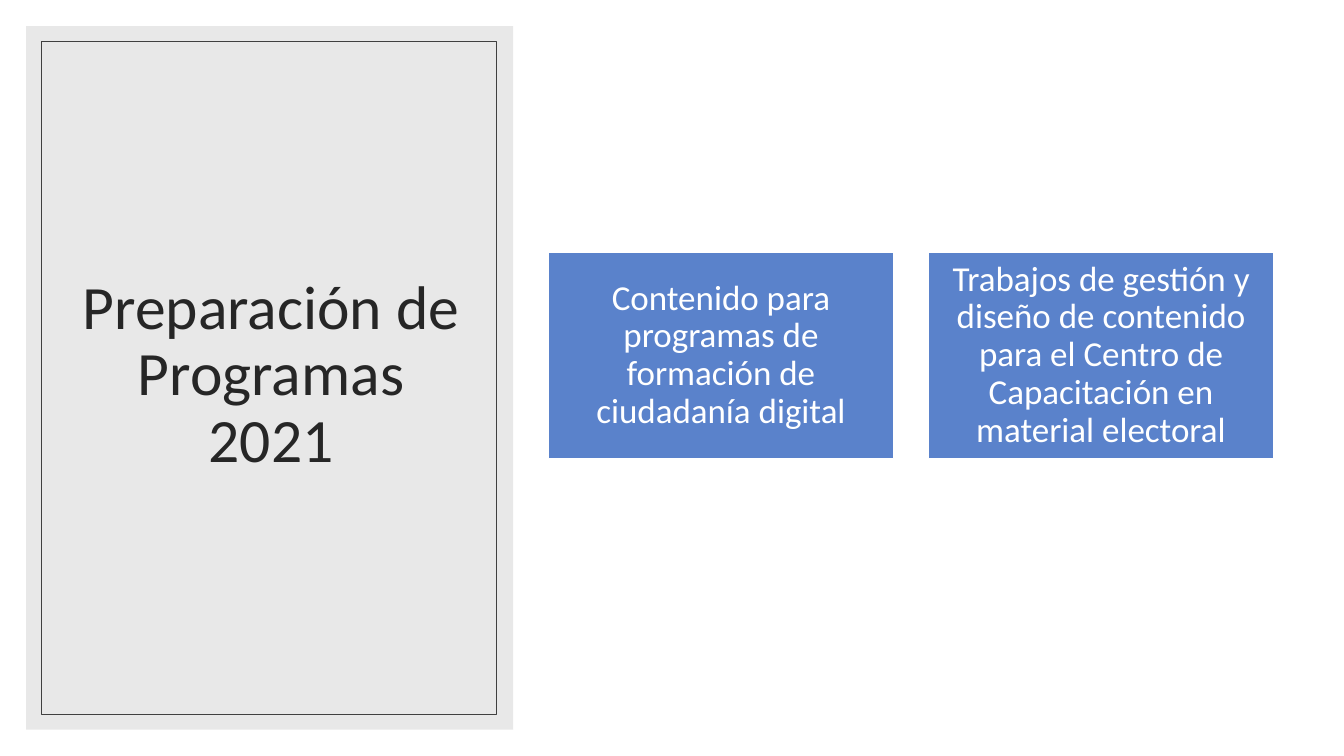
from lxml import etree
from pptx import Presentation
from pptx.dml.color import RGBColor
from pptx.enum.shapes import MSO_SHAPE
from pptx.enum.text import MSO_ANCHOR, MSO_AUTO_SIZE, PP_ALIGN
from pptx.oxml.ns import qn
from pptx.util import Inches, Pt

RECT = MSO_SHAPE.RECTANGLE
MIDDLE = MSO_ANCHOR.MIDDLE
CENTER = PP_ALIGN.CENTER
NO_FIT = MSO_AUTO_SIZE.NONE

FONT = "Calibri"
CARDS = [
    "Contenido para programas de formación de ciudadanía digital",
    "Trabajos de gestión y diseño de contenido para el Centro de "
    "Capacitación en material electoral",
]
LEFT, TOP, WIDE, HIGH, STEP = 5.44, 2.5, 3.42, 2.05, 3.77


def color(code):
    return RGBColor.from_string(code)


def apply(target, values):
    for name, value in values.items():
        setattr(target, name, value)


def place(shape, left, top, width, height):
    apply(shape, {"left": Inches(left), "top": Inches(top),
                  "width": Inches(width), "height": Inches(height)})


def write(shape, text, size, tint, inset):
    frame = shape.text_frame
    frame.text = text
    side = Inches(inset)
    apply(frame, {"word_wrap": True, "auto_size": NO_FIT,
                  "vertical_anchor": MIDDLE,
                  "margin_left": side, "margin_right": side,
                  "margin_top": Inches(0.05), "margin_bottom": Inches(0.05)})
    para = frame.paragraphs[0]
    apply(para, {"alignment": CENTER, "line_spacing": 0.9})
    font = para.runs[0].font
    apply(font, {"name": FONT, "size": Pt(size)})
    font.color.rgb = color(tint)


def box(slide, spot, fill=None, line=None, weight=1, alpha=None):
    shape = slide.shapes.add_shape(RECT, *map(Inches, spot))
    shape.shadow.inherit = False
    if fill:
        shape.fill.solid()
        shape.fill.fore_color.rgb = color(fill)
    else:
        shape.fill.background()
    if line:
        shape.line.color.rgb = color(line)
        shape.line.width = Pt(weight)
    else:
        shape.line.fill.background()
    if alpha:
        tone = shape.element.spPr.find(qn("a:solidFill"))[0]
        etree.SubElement(tone, qn("a:alpha"), val=str(alpha * 1000))
    return shape


def heading(slide, text):
    title = slide.shapes.title
    place(title, 0.63, 0.61, 4.12, 6.24)
    write(title, text, 44, "262626", 0.1)
    title.element.getparent().append(title.element)


def card(slide, index, text):
    spot = (LEFT + index * STEP, TOP, WIDE, HIGH)
    shape = box(slide, spot, "5A82CB", "FFFFFF")
    write(shape, text, 25, "FFFFFF", 0.1)


def main():
    deck = Presentation()
    apply(deck, {"slide_width": Inches(13.33), "slide_height": Inches(7.5)})
    slide = deck.slides.add_slide(deck.slide_layouts[5])
    box(slide, (0.26, 0.26, 4.83, 6.98), "D9D9D9", alpha=60)
    heading(slide, "Preparación de Programas 2021")
    box(slide, (0.41, 0.41, 4.51, 6.68), line="404040", weight=0.5)
    for index, text in enumerate(CARDS):
        card(slide, index, text)
    deck.save("out.pptx")


if __name__ == "__main__":
    main()
